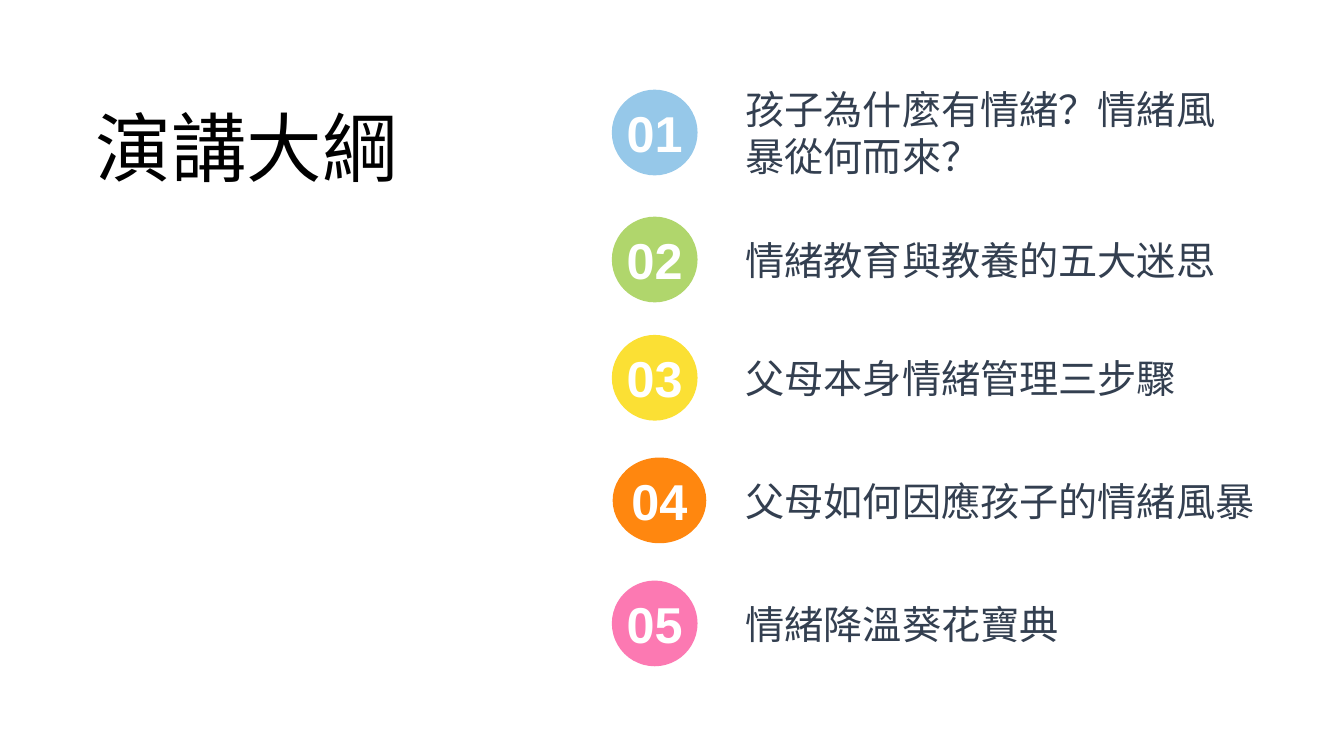
import pptx
import pptx.util
import pptx.dml.color
import pptx.enum.shapes
import pptx.enum.text
from dataclasses import dataclass

Cm, Pt = pptx.util.Cm, pptx.util.Pt
RGB = pptx.dml.color.RGBColor.from_string
ALIGN = pptx.enum.text.PP_ALIGN

HEADING = "演講大綱"
# topic, lines, text width, badge colour, badge left, badge width, centre height (cm)
TOPICS = [
    ("孩子為什麼有情緒？情緒風暴從何而來？", 2, 13.0, "96C8E9", 15.42, 2.16, 3.34),
    ("情緒教育與教養的五大迷思", 1, 12.52, "B0D66C", 15.42, 2.16, 6.54),
    ("父母本身情緒管理三步驟", 1, 12.52, "FBE034", 15.42, 2.16, 9.52),
    ("父母如何因應孩子的情緒風暴", 1, 14.15, "FF870F", 15.44, 2.36, 12.61),
    ("情緒降溫葵花寶典", 1, 12.52, "FC79B2", 15.42, 2.16, 15.71),
]
BADGE_HEIGHT = 2.16
TOPIC_LEFT = 18.49
LINE_HEIGHT = 1.2
INSET_X, INSET_Y = 0.3, 0.13


@dataclass(frozen=True)
class Theme:
    font: str = "Arial"
    heading: str = "000000"
    topic: str = "333F50"
    number: str = "FFFFFF"
    heading_size: int = 54
    topic_size: int = 28
    number_size: int = 36


THEME = Theme()


def write(shape, text, size, colour, inset_x=INSET_X, bold=False, align=ALIGN.LEFT):
    frame = shape.text_frame
    frame.word_wrap = True
    frame.vertical_anchor = pptx.enum.text.MSO_ANCHOR.MIDDLE
    frame.margin_left = frame.margin_right = Cm(inset_x)
    frame.margin_top = frame.margin_bottom = Cm(INSET_Y)
    paragraph = frame.paragraphs[0]
    paragraph.text = text
    paragraph.alignment = align
    paragraph.font.name = THEME.font
    paragraph.font.size = Pt(size)
    paragraph.font.bold = bold
    paragraph.font.color.rgb = RGB(colour)


def add_topic(slide, number, topic, lines, width, colour, badge_left, badge_width, centre):
    """Group a topic with its numbered badge, both centred on one height."""
    group = slide.shapes.add_group_shape()
    height = lines * LINE_HEIGHT + 2 * INSET_Y
    label = group.shapes.add_textbox(
        Cm(TOPIC_LEFT), Cm(centre - height / 2), Cm(width), Cm(height))
    write(label, topic, THEME.topic_size, THEME.topic)

    badge = group.shapes.add_shape(
        pptx.enum.shapes.MSO_SHAPE.OVAL, Cm(badge_left), Cm(centre - BADGE_HEIGHT / 2),
        Cm(badge_width), Cm(BADGE_HEIGHT))
    badge.shadow.inherit = False
    badge.fill.solid()
    badge.fill.fore_color.rgb = RGB(colour)
    badge.line.fill.background()
    write(badge, f"{number:02d}", THEME.number_size, THEME.number,
          inset_x=0, bold=True, align=ALIGN.CENTER)


def main():
    deck = pptx.Presentation()
    deck.slide_width, deck.slide_height = Cm(33.87), Cm(19.05)
    slide = deck.slides.add_slide(deck.slide_layouts[6])

    heading = slide.shapes.add_textbox(Cm(2.16), Cm(2.41), Cm(9.17), Cm(2.57))
    write(heading, HEADING, THEME.heading_size, THEME.heading, inset_x=0.25)
    for number, topic in enumerate(TOPICS, start=1):
        add_topic(slide, number, *topic)
    deck.save("out.pptx")


if __name__ == "__main__":
    main()
